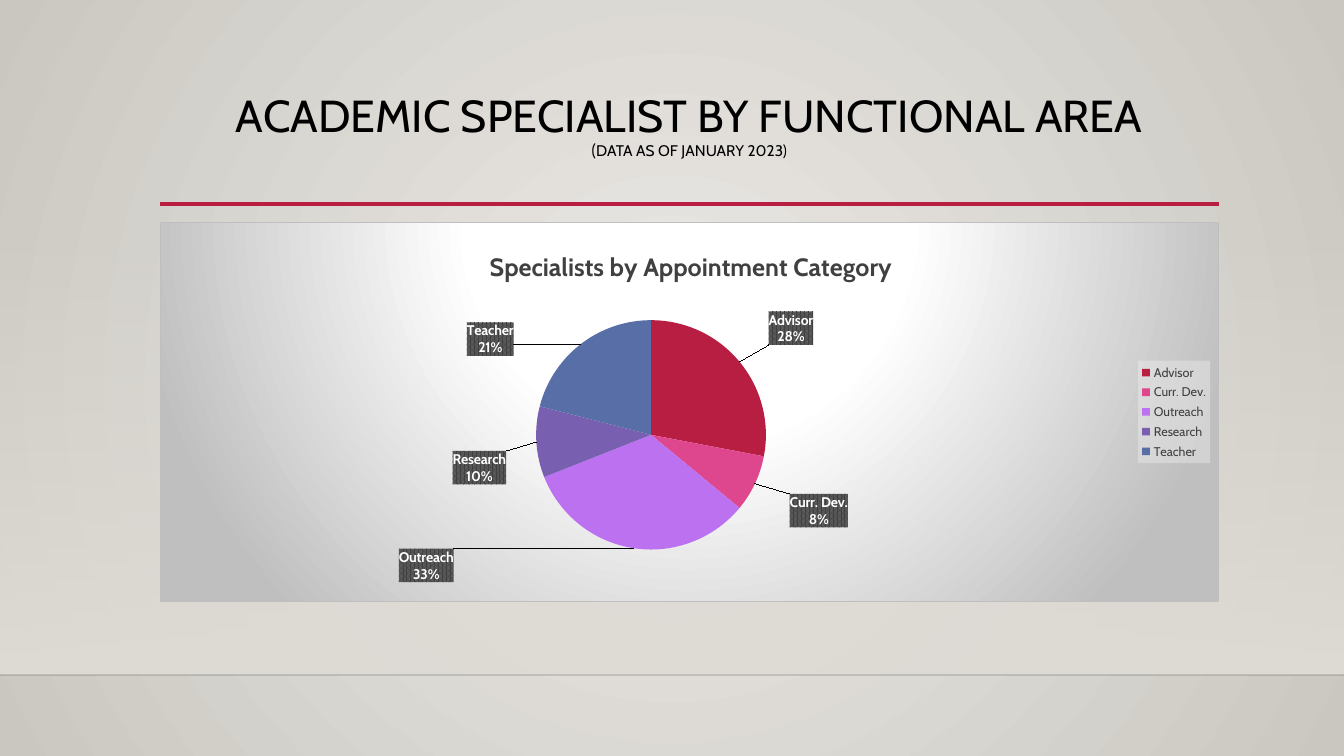
import math

from lxml import etree
from pptx import Presentation
from pptx.chart.data import CategoryChartData
from pptx.dml.color import RGBColor
from pptx.enum.chart import XL_CHART_TYPE, XL_LABEL_POSITION, XL_LEGEND_POSITION
from pptx.enum.shapes import MSO_CONNECTOR, MSO_SHAPE
from pptx.enum.text import MSO_ANCHOR, PP_ALIGN
from pptx.oxml import parse_xml
from pptx.oxml.ns import qn
from pptx.util import Pt

PIE = XL_CHART_TYPE.PIE
LABEL_CENTER = XL_LABEL_POSITION.CENTER
LEGEND_RIGHT = XL_LEGEND_POSITION.RIGHT
STRAIGHT = MSO_CONNECTOR.STRAIGHT
RECTANGLE = MSO_SHAPE.RECTANGLE
TOP = MSO_ANCHOR.TOP
CENTER = PP_ALIGN.CENTER

PAGE_WIDTH, PAGE_HEIGHT = 1344, 756
EMU_PER_PX = 12192000 / PAGE_WIDTH
FONT = "Cabin"
NAMESPACES = (
    'xmlns:a="http://schemas.openxmlformats.org/drawingml/2006/main" '
    'xmlns:c="http://schemas.openxmlformats.org/drawingml/2006/chart"'
)
LINEAR_DOWN = '<a:lin ang="5400000" scaled="0"/>'
PIE_RADIUS = 115
PIE_CENTER = (491, 213)
SLICES = [
    ("Advisor", 28, "B71E42", (631, 106)),
    ("Curr. Dev.", 8, "DE478E", (659, 289)),
    ("Outreach", 33, "BC72F0", (266, 344)),
    ("Research", 10, "795FAF", (319, 246)),
    ("Teacher", 21, "586EA6", (330, 117)),
]


def px(length):
    """Turn pixels into EMU."""
    return round(length * EMU_PER_PX)


def color(code):
    """Turn a hex string into a colour."""
    return RGBColor.from_string(code)


def element(xml):
    """Parse an XML fragment whose root lacks namespace declarations."""
    head, tail = xml.split(">", 1)
    closing = "/" if head.endswith("/") else ""
    return parse_xml(f"{head.rstrip('/')} {NAMESPACES}{closing}>{tail}")


def circle(top, bottom):
    """Return the path of a radial gradient with the given focus."""
    return (f'<a:path path="circle"><a:fillToRect l="50000" t="{top}" '
            f'r="50000" b="{bottom}"/></a:path>')


def gradient(stops, direction):
    """Return gradient XML for (percent, colour, opacity) stops."""
    marks = "".join(
        f'<a:gs pos="{place * 1000}"><a:srgbClr val="{code}">'
        f'<a:alpha val="{opacity * 1000}"/></a:srgbClr></a:gs>'
        for place, code, opacity in stops
    )
    return f'<a:gradFill rotWithShape="1"><a:gsLst>{marks}</a:gsLst>{direction}</a:gradFill>'


def swap_solid(parent, fill_xml):
    """Replace the first solid fill under parent."""
    solid = parent.find(".//" + qn("a:solidFill"))
    solid.getparent().replace(solid, element(fill_xml))


def format_font(font, size, code, bold=False):
    """Set typeface, size, colour and weight."""
    font.name, font.size, font.bold = FONT, Pt(size), bold
    font.color.rgb = color(code)


def add_span(para, text, **style):
    """Add formatted text to a paragraph."""
    span = para.add_run()
    span.text = text
    format_font(span.font, **style)


def add_rule(page, left, top, width, code, weight, opacity=100):
    """Draw a horizontal line."""
    rule = page.shapes.add_connector(STRAIGHT, px(left), px(top), px(left + width), px(top))
    rule.line.color.rgb = color(code)
    rule.line.width = Pt(weight)
    properties = rule._element.spPr
    etree.SubElement(properties, qn("a:effectLst"))
    tint = properties.find(".//" + qn("a:srgbClr"))
    etree.SubElement(tint, qn("a:alpha")).set("val", str(opacity * 1000))


def add_backdrop(page, top, height):
    """Paint the wall, its lower glow and the floor edge."""
    page.background.fill.solid()
    page.background.fill.fore_color.rgb = color("ECEAE7")
    swap_solid(page._element, gradient(
        [(0, "ECEAE7", 100), (100, "CAC7C1", 100)], circle(50000, 50000)))
    glow = page.shapes.add_shape(RECTANGLE, 0, px(top), px(PAGE_WIDTH), px(height))
    glow.shadow.inherit = False
    glow.line.fill.background()
    glow.fill.solid()
    glow.fill.fore_color.rgb = color("DFDBD5")
    swap_solid(glow._element.spPr, gradient(
        [(0, "DFDBD5", 0), (100, "DFDBD5", 100)], LINEAR_DOWN))
    add_rule(page, 0, top + height, PAGE_WIDTH, "000001", 1, opacity=20)


def add_heading(page, left, top, width, height):
    """Write the heading with its date line and underline."""
    box = page.shapes.add_textbox(px(left), px(top), px(width), px(height))
    frame = box.text_frame
    frame.word_wrap = True
    frame.vertical_anchor = TOP
    para = frame.paragraphs[0]
    para.alignment = CENTER
    para.line_spacing = 0.9
    add_span(para, "ACADEMIC SPECIALIST BY FUNCTIONAL AREA", size=32, code="000000")
    para.add_line_break()
    add_span(para, "(", size=12, code="000000")
    add_span(para, "DATA AS OF JANUARY 2023)", size=11, code="000000")
    add_rule(page, left, top + height - 1, width, "B71E42", 2.5)


def manual_layout(x, y, extra=""):
    """Return a chart layout element from fractions of the chart."""
    return element(f'<c:layout><c:manualLayout>{extra}<c:xMode val="edge"/><c:yMode val="edge"/>'
                   f'<c:x val="{x:.4f}"/><c:y val="{y:.4f}"/></c:manualLayout></c:layout>')


def place_plot(chart, width, height):
    """Fix the pie inside the chart."""
    area = chart._chartSpace.chart.plotArea
    for old in area.findall(qn("c:layout")):
        area.remove(old)
    layout = manual_layout((PIE_CENTER[0] - PIE_RADIUS) / width,
                           (PIE_CENTER[1] - PIE_RADIUS) / height,
                           '<c:layoutTarget val="inner"/>')
    for name, side in (("w", width), ("h", height)):
        etree.SubElement(layout[0], qn(f"c:{name}")).set("val", f"{2 * PIE_RADIUS / side:.4f}")
    area.insert(0, layout)


def format_labels(labels, holder):
    """Give labels a dark hatch, white text, category and percent."""
    format_font(labels.font, 10, "FFFFFF", bold=True)
    labels.position = LABEL_CENTER
    holder.find(qn("c:txPr")).addprevious(element(
        '<c:spPr><a:pattFill prst="pct75"><a:fgClr><a:srgbClr val="404040"/></a:fgClr>'
        '<a:bgClr><a:srgbClr val="595959"/></a:bgClr></a:pattFill></c:spPr>'))
    for name in ("LegendKey", "Val", "CatName", "SerName", "Percent"):
        shown = name in ("CatName", "Percent")
        holder.find(qn(f"c:show{name}")).set("val", str(int(shown)))


def style_slices(series, width, height):
    """Colour each slice and move its label to its place."""
    labels = series.data_labels
    holder = series._element.find(qn("c:dLbls"))
    format_labels(labels, holder)
    total = sum(share for _, share, _, _ in SLICES)
    passed = 0
    for index, (_, share, code, target) in enumerate(SLICES):
        point = series.points[index]
        point.format.fill.solid()
        point.format.fill.fore_color.rgb = color(code)
        angle = 2 * math.pi * (passed + share / 2) / total
        passed += share
        start_x = PIE_CENTER[0] + PIE_RADIUS / 2 * math.sin(angle)
        start_y = PIE_CENTER[1] - PIE_RADIUS / 2 * math.cos(angle)
        point.data_label.position = LABEL_CENTER
        mark = holder.findall(qn("c:dLbl"))[index]
        format_labels(point.data_label, mark)
        layout = element(
            f'<c:layout><c:manualLayout><c:x val="{(target[0] - start_x) / width:.4f}"/>'
            f'<c:y val="{(target[1] - start_y) / height:.4f}"/></c:manualLayout></c:layout>')
        mark.find(qn("c:idx")).addnext(layout)


def add_pie(page, left, top, width, height):
    """Place the pie chart with title, legend and panel."""
    data = CategoryChartData()
    data.categories = [name for name, _, _, _ in SLICES]
    data.add_series("Series 1", [share for _, share, _, _ in SLICES])
    chart = page.shapes.add_chart(PIE, px(left), px(top), px(width), px(height), data).chart
    format_font(chart.font, 10, "000000")
    panel = gradient([(0, "FFFFFF", 100), (39, "FFFFFF", 100), (100, "BFBFBF", 100)],
                     circle(-80000, 180000))
    chart._chartSpace.find(qn("c:txPr")).addprevious(element(
        f'<c:spPr>{panel}<a:ln w="9525"><a:solidFill><a:srgbClr val="BFBFBF"/>'
        '</a:solidFill></a:ln></c:spPr>'))
    para = chart.chart_title.text_frame.paragraphs[0]
    add_span(para, "Specialists by Appointment Category", size=18, code="404040", bold=True)
    title = chart.chart_title._element
    for old in title.findall(qn("c:layout")):
        title.remove(old)
    title.find(qn("c:tx")).addnext(manual_layout(325 / width, 22 / height))
    chart.has_legend = True
    chart.legend.position = LEGEND_RIGHT
    chart.legend.include_in_layout = False
    format_font(chart.legend.font, 9, "404040")
    chart.legend._element.find(qn("c:txPr")).addprevious(element(
        '<c:spPr><a:solidFill><a:srgbClr val="F2F2F2"><a:alpha val="39000"/>'
        '</a:srgbClr></a:solidFill></c:spPr>'))
    place_plot(chart, width, height)
    chart.plots[0].vary_by_categories = True
    style_slices(chart.plots[0].series[0], width, height)


def main():
    """Build the deck and save it."""
    deck = Presentation()
    deck.slide_width, deck.slide_height = px(PAGE_WIDTH), px(PAGE_HEIGHT)
    page = deck.slides.add_slide(deck.slide_layouts[6])
    add_backdrop(page, 223, 452)
    add_heading(page, 160, 89, 1059, 116)
    add_pie(page, 160, 222, 1059, 380)
    deck.save("out.pptx")


if __name__ == "__main__":
    main()
